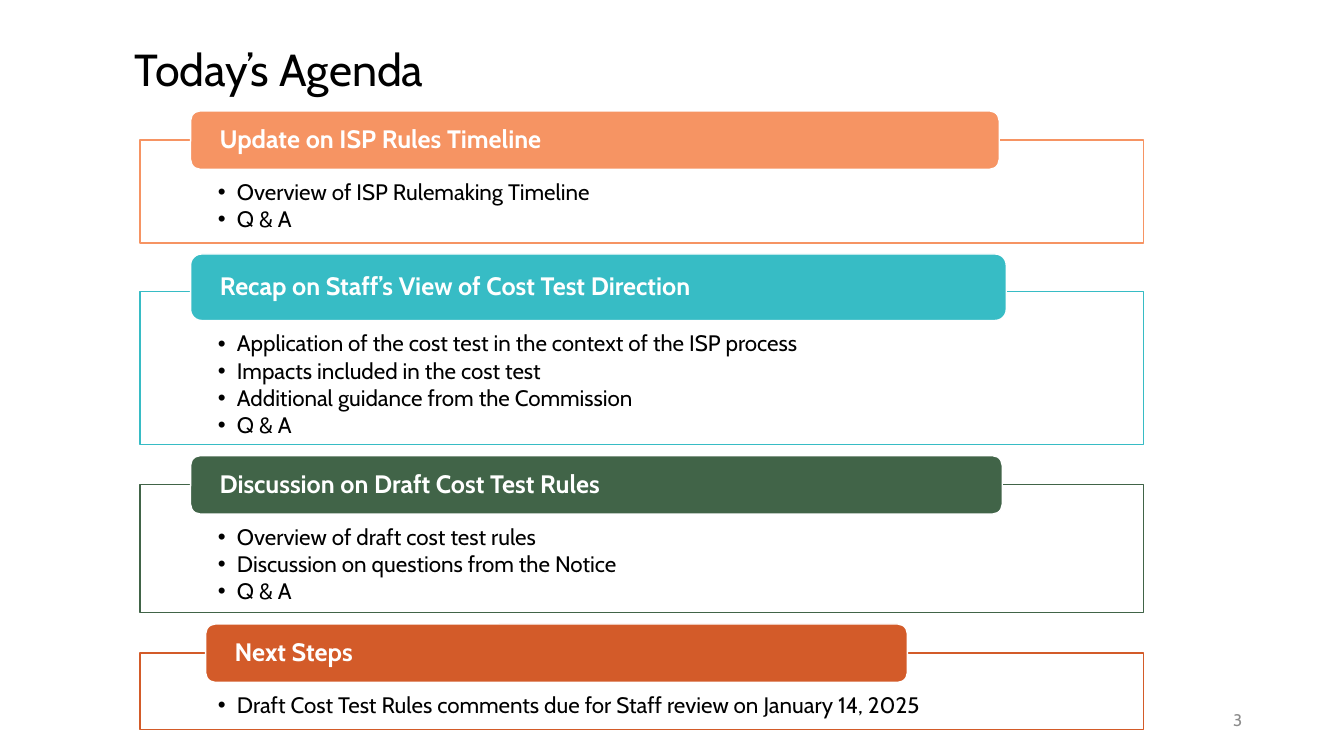
from pptx import Presentation, util as u
from pptx.dml.color import RGBColor
from pptx.enum import shapes, text
from pptx.oxml.ns import qn
from lxml import etree

FONT = "Cabin"
LEFT, TOP, WIDTH, GAP = 1.39, 1.10, 9.95, 0.11
AGENDA = [
    dict(heading="Update on ISP Rules Timeline", color="F69463",
         height=1.02, rise=0.29, tab=(0.50, 8.02, 0.58),
         items=["Overview of ISP Rulemaking Timeline", "Q & A"]),
    dict(heading="Recap on Staff’s View of Cost Test Direction", color="37BCC5",
         height=1.52, rise=0.37, tab=(0.50, 8.09, 0.66),
         items=["Application of the cost test in the context of the ISP process",
                "Impacts included in the cost test",
                "Additional guidance from the Commission", "Q & A"]),
    dict(heading="Discussion on Draft Cost Test Rules", color="416448",
         height=1.27, rise=0.29, tab=(0.50, 8.05, 0.58),
         items=["Overview of draft cost test rules",
                "Discussion on questions from the Notice", "Q & A"]),
    dict(heading="Next Steps", color="D35B29",
         height=0.76, rise=0.29, tab=(0.65, 6.96, 0.58),
         items=["Draft Cost Test Rules comments due for Staff review on January 14, 2025"]),
]


def rgb(color):
    """Turn a hex string into a colour."""
    return RGBColor.from_string(color)


def set_frame(tf, anchor, margins):
    """Set wrapping, anchor and margins (left, top, right, bottom)."""
    tf.word_wrap = True
    tf.vertical_anchor = anchor
    tf.margin_left, tf.margin_top, tf.margin_right, tf.margin_bottom = map(u.Inches, margins)


def add_run(p, words, size, color, bold=False, align=text.PP_ALIGN.LEFT):
    """Add one formatted run to a paragraph."""
    p.alignment = align
    p.line_spacing = 0.9
    r = p.add_run()
    r.text = words
    r.font.name, r.font.size, r.font.bold = FONT, u.Pt(size), bold
    r.font.color.rgb = rgb(color)


def add_label(s, box, words, size, color, align=text.PP_ALIGN.LEFT):
    """Add a one-line text box, centred vertically."""
    tf = s.shapes.add_textbox(*map(u.Inches, box)).text_frame
    set_frame(tf, text.MSO_ANCHOR.MIDDLE, (0.1, 0.05, 0.1, 0.05))
    add_run(tf.paragraphs[0], words, size, color, align=align)


def add_block(s, kind, box, fill, line):
    """Add a filled and outlined shape without shadow."""
    sp = s.shapes.add_shape(kind, *map(u.Inches, box))
    sp.shadow.inherit = False
    sp.fill.solid()
    sp.fill.fore_color.rgb = rgb(fill)
    sp.line.color.rgb = rgb(line)
    sp.line.width = u.Pt(1)
    return sp


def add_bullet(p):
    """Give a paragraph a hanging round bullet."""
    pPr = p._p.get_or_add_pPr()
    pPr.set("marL", str(u.Inches(0.19)))
    pPr.set("indent", str(u.Inches(-0.19)))
    etree.SubElement(pPr, qn("a:buFont"), typeface="Arial")
    etree.SubElement(pPr, qn("a:buChar"), char="•")


def add_section(s, left, top, width, heading, color, height, rise, tab, items):
    """Add a framed bullet list with its heading tab and return its bottom."""
    frame = add_block(s, shapes.MSO_SHAPE.RECTANGLE,
                      (left, top + rise, width, height), "FFFFFF", color)
    white = frame.fill._xPr.find(qn("a:solidFill"))[0]
    etree.SubElement(white, qn("a:alpha"), val="90000")
    tf = frame.text_frame
    set_frame(tf, text.MSO_ANCHOR.TOP, (0.77, 0.41, 0.77, 0.12))
    for i, item in enumerate(items):
        p = tf.add_paragraph() if i else tf.paragraphs[0]
        add_bullet(p)
        p.space_after = u.Pt(2.1)
        add_run(p, item, 16, "000000")

    offset, tab_width, tab_height = tab
    sp = add_block(s, shapes.MSO_SHAPE.ROUNDED_RECTANGLE,
                   (left + offset, top, tab_width, tab_height), color, "FFFFFF")
    set_frame(sp.text_frame, text.MSO_ANCHOR.MIDDLE, (0.26, 0, 0.26, 0))
    add_run(sp.text_frame.paragraphs[0], heading, 18, "FFFFFF", bold=True)
    return top + rise + height


def main():
    """Build the agenda slide."""
    prs = Presentation()
    prs.slide_width, prs.slide_height = u.Inches(13.33), u.Inches(7.5)
    s = prs.slides.add_slide(prs.slide_layouts[6])
    add_label(s, (1.24, 0.2, 8.62, 1.03), "Today’s Agenda", 32, "000000")
    add_label(s, (9.42, 6.95, 3, 0.4), "3", 12, "8C8C8C", text.PP_ALIGN.RIGHT)
    top = TOP
    for section in AGENDA:
        top = add_section(s, LEFT, top, WIDTH, **section) + GAP
    prs.save("out.pptx")


if __name__ == "__main__":
    main()
